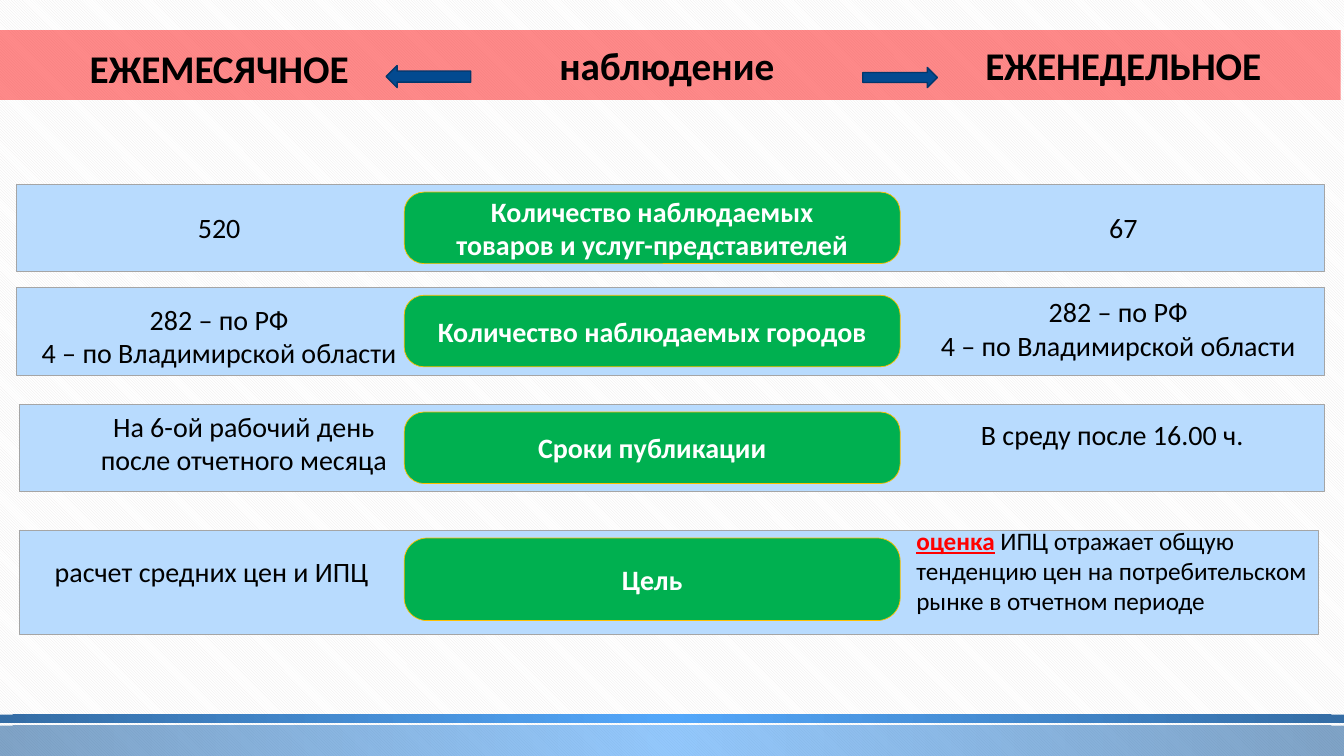
from pptx import Presentation
from pptx.dml.color import RGBColor
from pptx.enum.dml import MSO_PATTERN
from pptx.enum.shapes import MSO_SHAPE
from pptx.enum.text import MSO_ANCHOR, PP_ALIGN
from pptx.oxml import parse_xml
from pptx.oxml.ns import nsdecls, qn
from pptx.util import Pt

COLORS = {
    "stripe": "E9E7E7", "white": "FFFFFF", "black": "000000", "red": "FF0000",
    "band": "B8DBFE", "band_edge": "A5A5A5", "pill": "00B050", "pill_edge": "FFC000",
    "arrow": "034A90", "arrow_edge": "02376B", "glow": "2A93FB",
}
FONT = "Calibri"
PILL_LEFT, PILL_WIDTH, PILL_INSET = 288.7, 354.3, 5.4

FOOTERS = [((0, 518.4, 960, 21.6), 50), ((0, 510.5, 960, 5.8), 80)]
HEADER_BAND = (0, 21.6, 957.6, 49.7)
HEADINGS = [
    ("ЕЖЕМЕСЯЧНОЕ", (13.7, 18, 285.8, 51.1), MSO_ANCHOR.BOTTOM),
    ("ЕЖЕНЕДЕЛЬНОЕ", (659.5, 20.9, 285.8, 46.1), MSO_ANCHOR.BOTTOM),
    ("наблюдение", (344.2, 25.9, 264.2, 41), MSO_ANCHOR.TOP),
]
ARROWS = [
    (MSO_SHAPE.RIGHT_ARROW, (616.3, 48.2, 53.3, 14.4)),
    (MSO_SHAPE.LEFT_ARROW, (275.8, 46.8, 60.5, 15.8)),
]
CITIES = "282 – по РФ\n4 – по Владимирской области"
ROWS = [
    ("Количество наблюдаемых\nтоваров и услуг-представителей", (11.5, 131.8, 934.6, 62.3), 51.1,
     [("520", (13.7, 146.9, 285.8, 31.7)), ("67", (659.5, 146.9, 285.8, 31.7))]),
    ("Количество наблюдаемых городов", (11.5, 205.5, 934.6, 62.3), 51.1,
     [(CITIES, (13.7, 212.4, 285.8, 55.4)), (CITIES, (655.9, 206.9, 285.8, 55.4))]),
    ("Сроки публикации", (13.7, 288.9, 932.4, 62.3), 51.1,
     [("На 6-ой рабочий день после отчетного месяца", (51.1, 288.7, 246.2, 55.4)),
      ("В среду после 16.00 ч.", (651.6, 294.5, 285.8, 31.7))]),
    ("Цель", (13.7, 378.9, 928.1, 74.2), 59,
     [("расчет средних цен и ИПЦ", (26.6, 392.4, 249.1, 31.7))]),
]
GOAL_BOX = (651.6, 371.5, 294.5, 72.7)
GOAL_WORD = "оценка"
GOAL_REST = " ИПЦ отражает общую тенденцию цен на потребительском рынке в отчетном периоде"


def rgb(name):
    return RGBColor.from_string(COLORS[name])


def add_figure(kind, box, fill=None, edge=None, edge_width=0.5):
    figure = slide.shapes.add_shape(kind, *map(Pt, box))
    figure.shadow.inherit = False
    if fill:
        figure.fill.solid()
        figure.fill.fore_color.rgb = rgb(fill)
    else:
        figure.fill.background()
    if edge:
        figure.line.color.rgb = rgb(edge)
        figure.line.width = Pt(edge_width)
    else:
        figure.line.fill.background()
    return figure


def add_box(box):
    return slide.shapes.add_textbox(*map(Pt, box))


def replace_fill(figure, body):
    properties = figure._element.spPr
    properties.replace(properties.find(qn("a:noFill")), parse_xml(body))


def tint(name, percent):
    return f'<a:srgbClr val="{COLORS[name]}"><a:alpha val="{percent * 1000}"/></a:srgbClr>'


def write(holder, text, size=20, color="black", bold=False, underline=False,
          align=PP_ALIGN.CENTER, anchor=MSO_ANCHOR.TOP, append=False):
    frame = holder.text_frame
    frame.word_wrap = True
    frame.vertical_anchor = anchor
    for index, line in enumerate(text.split("\n")):
        paragraph = frame.add_paragraph() if index else frame.paragraphs[-1 if append else 0]
        paragraph.alignment = align
        run = paragraph.add_run()
        run.text = line
        run.font.name = FONT
        run.font.size = Pt(size)
        run.font.bold = bold
        run.font.underline = underline
        run.font.color.rgb = rgb(color)


deck = Presentation()
deck.slide_width, deck.slide_height = Pt(960), Pt(540)
slide = deck.slides.add_slide(deck.slide_layouts[6])

backdrop = slide.background.fill
backdrop.patterned()
backdrop.pattern = MSO_PATTERN.DARK_DOWNWARD_DIAGONAL
backdrop.fore_color.rgb = rgb("stripe")
backdrop.back_color.rgb = rgb("white")

for box, opacity in FOOTERS:
    replace_fill(
        add_figure(MSO_SHAPE.RECTANGLE, box),
        f'<a:gradFill {nsdecls("a")} rotWithShape="1"><a:gsLst>'
        f'<a:gs pos="0">{tint("glow", opacity)}</a:gs>'
        f'<a:gs pos="100000">{tint("arrow", opacity)}</a:gs></a:gsLst>'
        '<a:path path="circle"><a:fillToRect l="50000" t="50000" r="50000" b="50000"/></a:path>'
        '</a:gradFill>')

replace_fill(add_figure(MSO_SHAPE.RECTANGLE, HEADER_BAND),
             f'<a:solidFill {nsdecls("a")}>{tint("red", 46)}</a:solidFill>')

for label, band, pill_height, answers in ROWS:
    add_figure(MSO_SHAPE.RECTANGLE, band, "band", "band_edge")
    pill = add_figure(MSO_SHAPE.ROUNDED_RECTANGLE,
                      (PILL_LEFT, band[1] + PILL_INSET, PILL_WIDTH, pill_height),
                      "pill", "pill_edge")
    pill.adjustments[0] = 0.277
    write(pill, label, color="white", bold=True, anchor=MSO_ANCHOR.MIDDLE)
    for answer, box in answers:
        write(add_box(box), answer)

goal = add_box(GOAL_BOX)
goal.text_frame.margin_left = goal.text_frame.margin_right = Pt(2.9)
write(goal, GOAL_WORD, size=18, color="red", bold=True, underline=True, align=PP_ALIGN.LEFT)
write(goal, GOAL_REST, size=18, align=PP_ALIGN.LEFT, append=True)

for heading, box, anchor in HEADINGS:
    write(add_box(box), heading, size=28, bold=True, anchor=anchor)

for direction, box in ARROWS:
    add_figure(direction, box, "arrow", "arrow_edge", 1)

deck.save("out.pptx")
